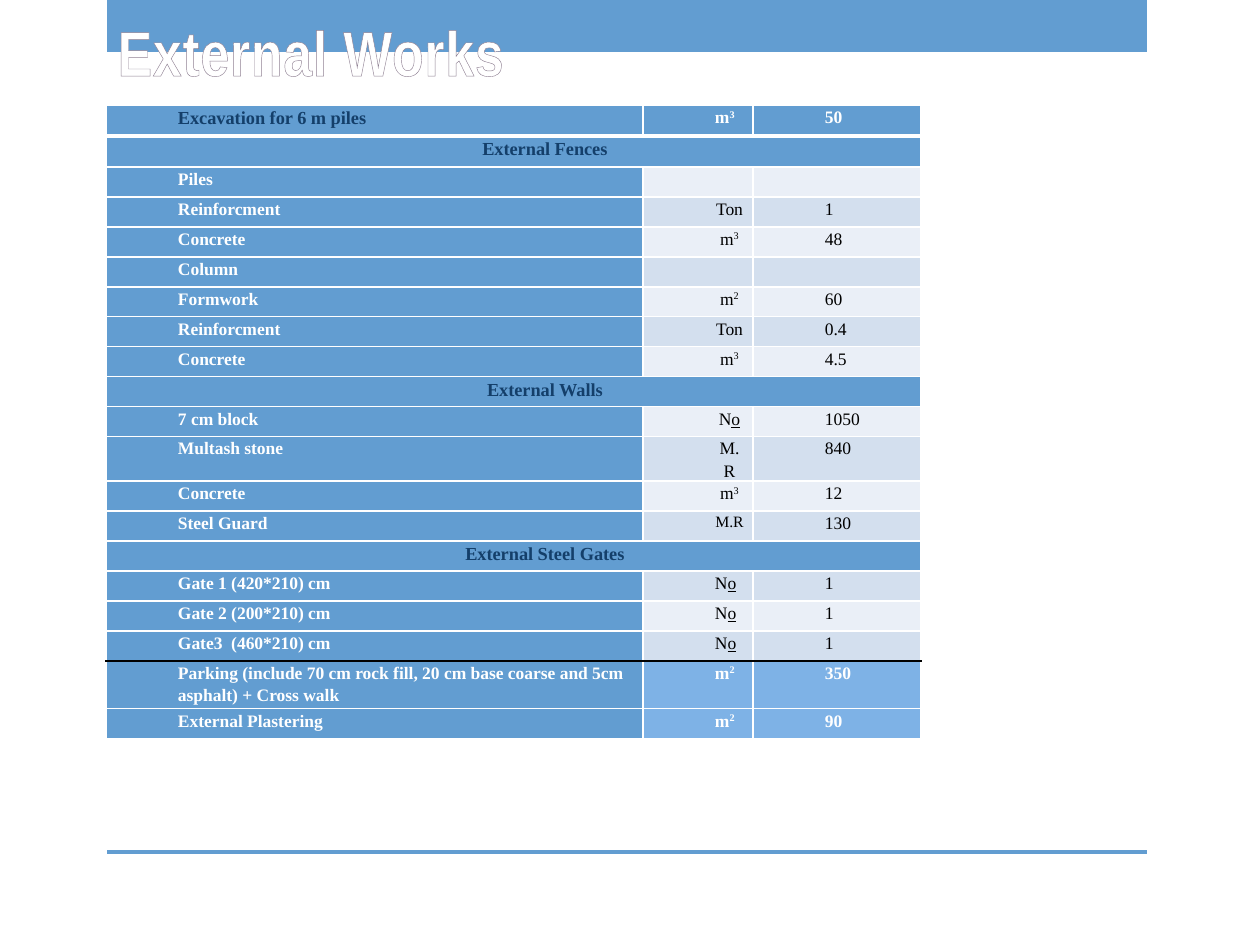
from lxml.etree import SubElement
from pptx import Presentation
from pptx.dml.color import RGBColor
from pptx.enum.shapes import MSO_SHAPE
from pptx.enum.text import MSO_ANCHOR, MSO_AUTO_SIZE, PP_ALIGN
from pptx.oxml import parse_xml
from pptx.oxml.ns import nsdecls, qn
from pptx.util import Emu, Pt

PX = 914400 // 126
BLUE = RGBColor(0x62, 0x9D, 0xD1)
TOTAL_BLUE = RGBColor(0x7E, 0xB2, 0xE6)
LIGHT_BAND = RGBColor(0xEA, 0xEF, 0xF7)
DARK_BAND = RGBColor(0xD3, 0xDF, 0xEE)
NAVY = RGBColor(0x14, 0x3F, 0x6A)
MAUVE = RGBColor(0x8F, 0x81, 0x93)
WHITE = RGBColor(0xFF, 0xFF, 0xFF)
BLACK = RGBColor(0, 0, 0)

CUBIC, SQUARE, NUMBER = ("m", "3"), ("m", "2"), ("N", "o")
TON, RUNNING = ("Ton",), ("M.R",)
WORKS = [
    ("Excavation for 6 m piles", CUBIC, "50"),
    ("External Fences",),
    ("Piles", (), ""),
    ("Reinforcment", TON, "1"),
    ("Concrete", CUBIC, "48"),
    ("Column", (), ""),
    ("Formwork", SQUARE, "60"),
    ("Reinforcment", TON, "0.4"),
    ("Concrete", CUBIC, "4.5"),
    ("External Walls",),
    ("7 cm block", NUMBER, "1050"),
    ("Multash stone", RUNNING, "840"),
    ("Concrete", CUBIC, "12"),
    ("Steel Guard", RUNNING, "130"),
    ("External Steel Gates",),
    ("Gate 1 (420*210) cm", NUMBER, "1"),
    ("Gate 2 (200*210) cm", NUMBER, "1"),
    ("Gate3  (460*210) cm", NUMBER, "1"),
    ("Parking (include 70 cm rock fill, 20 cm base coarse and 5cm asphalt) + Cross walk",
     SQUARE, "350"),
    ("External Plastering", SQUARE, "90"),
]
COLUMNS = (537, 110, 168)
GATES_HEADING, PARKING, STEEL_GUARD = 14, 18, 13


def px(length):
    """Turn whole pixels into EMU."""
    return Emu(length * PX)


def add_bar(slide, left, top, width, height):
    """Draw one plain blue bar."""
    bar = slide.shapes.add_shape(MSO_SHAPE.RECTANGLE, px(left), px(top), px(width), px(height))
    bar.shadow.inherit = False
    bar.fill.solid()
    bar.fill.fore_color.rgb = BLUE
    bar.line.fill.background()


def place_title(slide, left, top, width, height):
    """Put the outlined, shadowed heading over the top bar."""
    title = slide.shapes.title
    slide.shapes._spTree.append(title._element)
    title.left, title.top, title.width, title.height = map(px, (left, top, width, height))
    frame = title.text_frame
    frame.word_wrap = True
    frame.auto_size = MSO_AUTO_SIZE.NONE
    frame.vertical_anchor = MSO_ANCHOR.BOTTOM
    paragraph = frame.paragraphs[0]
    paragraph.alignment = PP_ALIGN.LEFT
    heading = paragraph.add_run()
    heading.text = "External Works"
    heading.font.size = Pt(36)
    heading.font.bold = True
    heading.font.name = "Arial Narrow"
    heading.font.color.rgb = WHITE
    properties = heading._r.get_or_add_rPr()
    properties.set("spc", "50")
    properties.insert(0, parse_xml(
        f'<a:ln {nsdecls("a")} w="12700"><a:solidFill><a:srgbClr val="{MAUVE}"/>'
        '</a:solidFill></a:ln>'))
    properties.find(qn("a:solidFill")).addnext(parse_xml(
        f'<a:effectLst {nsdecls("a")}><a:outerShdw blurRad="25400" dist="38100" dir="2700000">'
        f'<a:srgbClr val="{BLACK}"><a:alpha val="40000"/></a:srgbClr>'
        '</a:outerShdw></a:effectLst>'))


def set_borders(cell, top, bottom):
    """Give a cell white sides and the given (colour, points) top and bottom."""
    properties = cell._tc.get_or_add_tcPr()
    edges = {"L": (WHITE, 1), "R": (WHITE, 1), "T": top, "B": bottom}
    for position, (side, (color, points)) in enumerate(edges.items()):
        properties.insert(position, parse_xml(
            f'<a:ln{side} {nsdecls("a")} w="{Pt(points)}"><a:solidFill>'
            f'<a:srgbClr val="{color}"/></a:solidFill></a:ln{side}>'))


def write_cell(cell, parts, fill, color, size, bold, centred):
    """Fill a cell and write its text, with a raised digit or underlined o as mark."""
    cell.fill.solid()
    cell.fill.fore_color.rgb = fill
    cell.margin_left = cell.margin_right = px(9)
    cell.margin_top = cell.margin_bottom = 0
    paragraph = cell.text_frame.paragraphs[0]
    paragraph.line_spacing = 1.15
    paragraph.alignment = PP_ALIGN.CENTER if centred else PP_ALIGN.LEFT
    paragraph._p.get_or_add_pPr().set("marL", str(px(63)))
    for position, part in enumerate(parts):
        run = paragraph.add_run()
        run.text = part
        run.font.size = Pt(size)
        run.font.name = "Times New Roman"
        run.font.bold = bold
        run.font.color.rgb = color
        if position and part == "o":
            run.font.underline = True
        elif position:
            run._r.get_or_add_rPr().set("baseline", "30000")
    if not parts:
        SubElement(paragraph._p, qn("a:endParaRPr"), sz=str(size * 100))


def row_edge(index):
    """Return the colour and weight of the line above a row."""
    if index == PARKING:
        return BLACK, 1
    return WHITE, 3 if index == 1 else 1


def add_quantities(slide, left, top):
    """Build the table of external works."""
    heights = [48 if index == PARKING else 30 for index in range(len(WORKS))]
    heights[0] = heights[1] = 31
    frame = slide.shapes.add_table(len(WORKS), len(COLUMNS), px(left), px(top),
                                   px(sum(COLUMNS)), px(sum(heights)))
    table = frame.table
    table.first_row = table.horz_banding = False
    for column, width in zip(table.columns, COLUMNS):
        column.width = px(width)
    for index, (work, height) in enumerate(zip(WORKS, heights)):
        table.rows[index].height = px(height)
        cells = table.rows[index].cells
        heading = len(work) == 1
        navy = heading or index == 0
        strong = index == 0 or index >= PARKING
        write_cell(cells[0], (work[0],), BLUE, NAVY if navy else WHITE,
                   10.5 if navy else 10, True, heading)
        if heading:
            cells[0].merge(cells[2])
        else:
            band = DARK_BAND if index % 2 else LIGHT_BAND
            fill = BLUE if index == 0 else TOTAL_BLUE if strong else band
            color = WHITE if strong else BLACK
            unit, quantity = work[1:]
            write_cell(cells[1], unit, fill, color, 9 if index == STEEL_GUARD else 10,
                       strong, 0 < index < GATES_HEADING)
            write_cell(cells[2], (quantity,) if quantity else (), fill, color, 10, strong, False)
        for cell in cells:
            set_borders(cell, row_edge(index), row_edge(index + 1))


def main():
    """Assemble and save the slide."""
    deck = Presentation()
    deck.slide_width, deck.slide_height = px(1260), px(945)
    slide = deck.slides.add_slide(deck.slide_layouts[5])
    add_bar(slide, 107, 0, 1040, 52)
    add_bar(slide, 107, 850, 1040, 4)
    add_quantities(slide, 106, 105)
    place_title(slide, 105, 42, 746, 53)
    deck.save("out.pptx")


if __name__ == "__main__":
    main()
